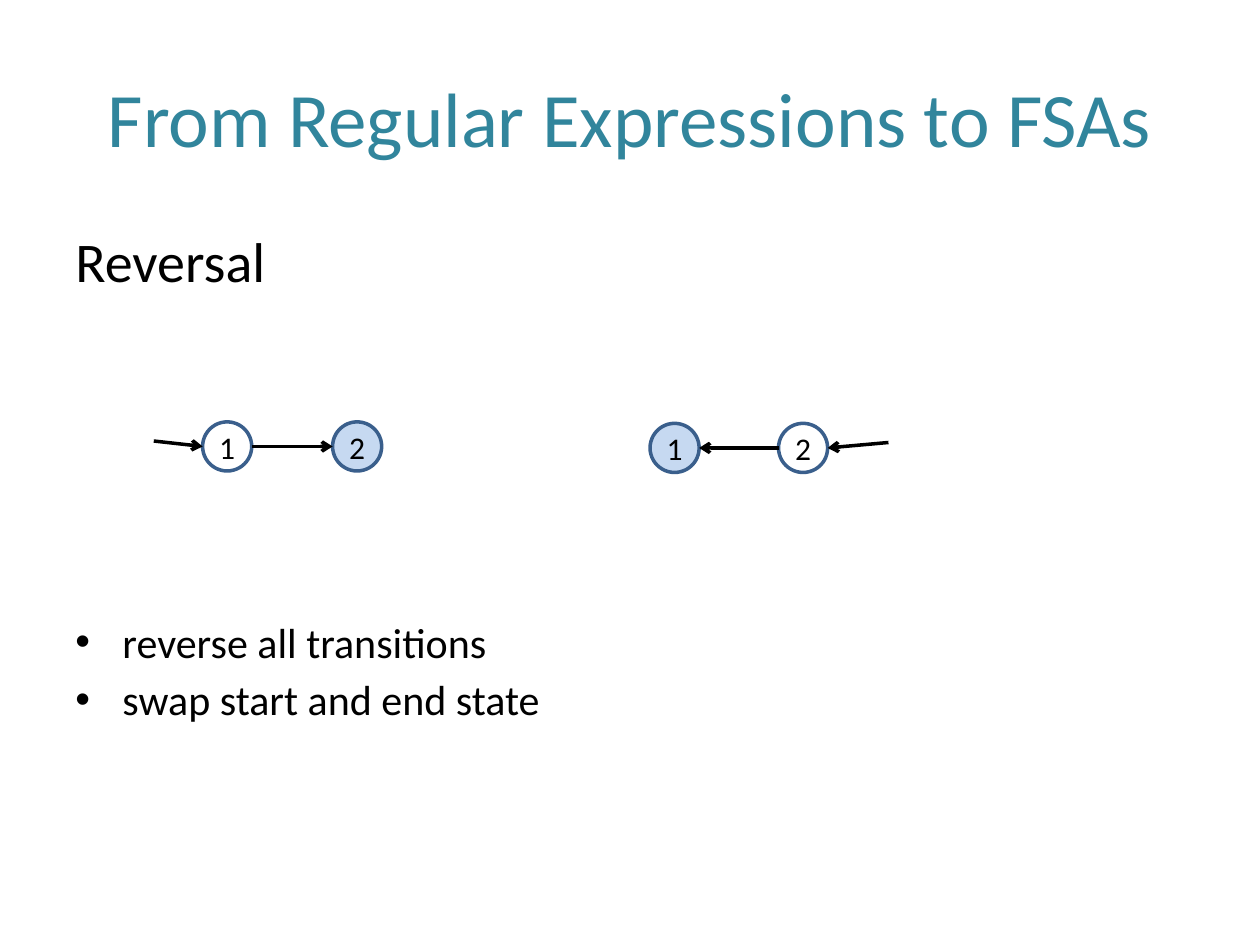
import pptx
import pptx.util
import pptx.dml.color
import pptx.enum.shapes
import pptx.enum.text
import lxml.etree

Cm, Pt = pptx.util.Cm, pptx.util.Pt
ALIGN = pptx.enum.text.PP_ALIGN
ANCHOR = pptx.enum.text.MSO_ANCHOR
KIND = pptx.enum.shapes

BLACK, TEAL, EDGE, FINAL = "000000", "31859C", "3A5F8C", "C6D9F1"
SIZE = 0.99  # node width, cm

# text, format of the font, format of the paragraph, bullet
TITLE = [("From Regular Expressions to FSAs", {"size": Pt(44)},
          {"alignment": ALIGN.CENTER}, False)]
BODY = [
    ("Reversal", {"size": Pt(32)}, {}, False),
    ("reverse all transitions", {"size": Pt(24)}, {"space_before": Pt(184)}, True),
    ("swap start and end state", {"size": Pt(24)}, {"space_before": Pt(4)}, True),
]
# the centre of each state, which state starts, and where its arrow begins
GRAPHS = [
    {"row": 9.0, "states": {"1": 4.58, "2": 7.2}, "start": "1", "end": "2",
     "entry": (3.1, 8.89)},
    {"row": 9.03, "states": {"1": 13.6, "2": 16.19}, "start": "2", "end": "1",
     "entry": (17.91, 8.92)},
]


def tint(code):
    return pptx.dml.color.RGBColor.from_string(code)


def apply(item, form):
    for name, value in form.items():
        setattr(item, name, value)


def add(parent, tag, **attrs):
    """Append a drawing element to an XML parent."""
    space = "{http://schemas.openxmlformats.org/drawingml/2006/main}"
    return lxml.etree.SubElement(parent, space + tag, attrs)


def write(frame, lines, color):
    for i, (text, font, form, dot) in enumerate(lines):
        para = frame.add_paragraph() if i else frame.paragraphs[0]
        run = para.add_run()
        run.text = text
        apply(run.font, {"name": "Calibri", **font})
        run.font.color.rgb = tint(color)
        apply(para, form)
        if dot:
            props = para._p.get_or_add_pPr()
            props.set("marL", str(Cm(0.95)))
            props.set("indent", str(Cm(-0.95)))
            add(props, "buFont", typeface="Arial")
            add(props, "buChar", char="•")


def block(slide, place, lines, color, anchor):
    box = slide.shapes.add_textbox(*map(Cm, place))
    apply(box.text_frame, {"word_wrap": True, "vertical_anchor": anchor})
    write(box.text_frame, lines, color)


def state(slide, x, y, label, final):
    node = slide.shapes.add_shape(
        KIND.MSO_SHAPE.OVAL, Cm(x - SIZE / 2), Cm(y - SIZE / 2), Cm(SIZE), Cm(SIZE))
    node.shadow.inherit = False
    if final:
        node.fill.solid()
        node.fill.fore_color.rgb = tint(FINAL)
    else:
        node.fill.background()
    node.line.color.rgb = tint(EDGE)
    node.line.width = Pt(2)
    sides = ("left", "right", "top", "bottom")
    apply(node.text_frame, {f"margin_{side}": 0 for side in sides})
    apply(node.text_frame, {"word_wrap": False, "vertical_anchor": ANCHOR.MIDDLE})
    write(node.text_frame,
          [(label, {"size": Pt(18)}, {"alignment": ALIGN.CENTER}, False)], BLACK)


def arrow(slide, start, end):
    line = slide.shapes.add_connector(
        KIND.MSO_CONNECTOR.STRAIGHT, *map(Cm, (*start, *end)))
    line.line.color.rgb = tint(BLACK)
    line.line.width = Pt(2)
    add(line.line._get_or_add_ln(), "tailEnd", type="arrow")
    add(line._element.spPr, "effectLst")


def draw(slide, graph):
    row, states = graph["row"], graph["states"]
    first, last = states[graph["start"]], states[graph["end"]]
    for label, x in states.items():
        state(slide, x, row, label, label == graph["end"])
    reach = SIZE / 2 if last > first else -SIZE / 2
    arrow(slide, graph["entry"], (first - reach, row))
    arrow(slide, (first + reach, row), (last - reach, row))


def main():
    deck = pptx.Presentation()
    apply(deck, {"slide_width": Cm(25.4), "slide_height": Cm(19.05)})
    slide = deck.slides.add_slide(deck.slide_layouts[6])
    block(slide, (1.27, 0.76, 22.86, 3.18), TITLE, TEAL, ANCHOR.MIDDLE)
    block(slide, (1.27, 4.45, 22.86, 12.57), BODY, BLACK, ANCHOR.TOP)
    for graph in GRAPHS:
        draw(slide, graph)
    deck.save("out.pptx")


if __name__ == "__main__":
    main()
